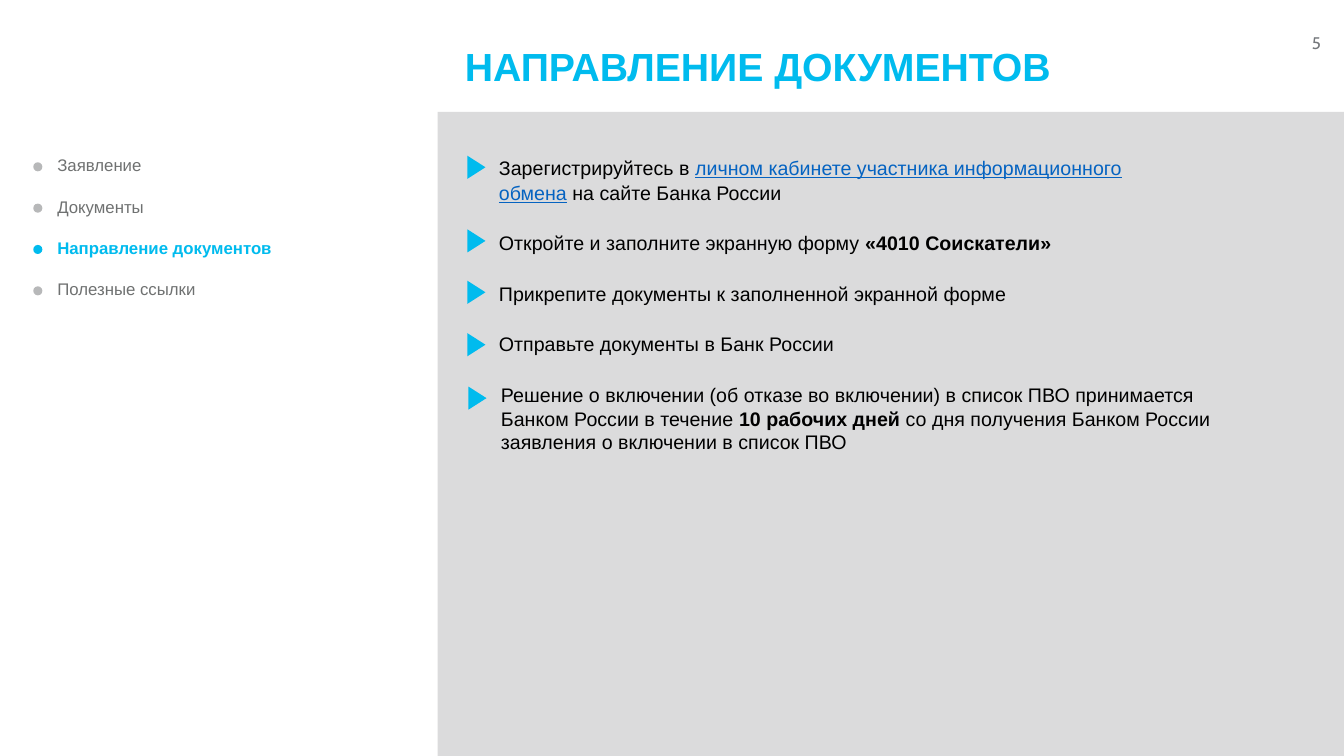
from pptx import Presentation
from pptx.dml.color import RGBColor
from pptx.enum.shapes import MSO_SHAPE
from pptx.enum.text import MSO_ANCHOR, PP_ALIGN
from pptx.util import Inches, Pt

CYAN = RGBColor(0x00, 0xBB, 0xEE)
PANEL = RGBColor(0xDB, 0xDB, 0xDC)
DOT = RGBColor(0xB7, 0xB8, 0xB9)
GRAY = RGBColor(0x6F, 0x71, 0x71)
PAGE = RGBColor(0x74, 0x77, 0x7B)
BLACK = RGBColor(0, 0, 0)
LINK = RGBColor(0x05, 0x63, 0xC1)

TOPICS = ["Заявление", "Документы", "Направление документов", "Полезные ссылки"]
ACTIVE = 2

# Each line is a list of (text, style) runs.
STEPS = [
    [("Зарегистрируйтесь в ", ""),
     ("личном кабинете участника информационного", "link")],
    [("обмена", "link"), (" на сайте Банка России", "")],
    [("Откройте и заполните экранную форму ", ""), ("«4010 Соискатели»", "bold")],
    [("Прикрепите документы к заполненной экранной форме", "")],
    [("Отправьте документы в Банк России", "")],
]
RESULT = [
    ("Решение о включении (об отказе во включении) в список ПВО принимается "
     "Банком России в течение ", ""),
    ("10 рабочих дней ", "bold"),
    ("со дня получения Банком России заявления о включении в список ПВО", ""),
]
ARROWS = [(4.61, 1.57), (4.61, 2.3), (4.61, 2.81), (4.61, 3.33), (4.62, 3.86)]


def style(font, size, color, bold=False, name="Arial"):
    font.name = name
    font.size = Pt(size)
    font.bold = bold
    font.color.rgb = color


def add_box(slide, x, y, w, h):
    frame = slide.shapes.add_textbox(
        Inches(x), Inches(y), Inches(w), Inches(h)).text_frame
    frame.word_wrap = True
    return frame


def add_form(slide, kind, x, y, w, h, color):
    form = slide.shapes.add_shape(
        kind, Inches(x), Inches(y), Inches(w), Inches(h))
    form.shadow.inherit = False
    form.fill.solid()
    form.fill.fore_color.rgb = color
    form.line.fill.background()
    return form


def add_runs(para, parts):
    for text, look in parts:
        run = para.add_run()
        run.text = text
        style(run.font, 14, LINK if look == "link" else BLACK, look == "bold")
        run.font.underline = look == "link"


def add_title(slide, text):
    title = slide.shapes.title
    title.left, title.top = Inches(4.51), Inches(0.18)
    title.width, title.height = Inches(11.5), Inches(1.01)
    frame = title.text_frame
    frame.text = text
    frame.vertical_anchor = MSO_ANCHOR.MIDDLE
    para = frame.paragraphs[0]
    para.alignment = PP_ALIGN.LEFT
    para.line_spacing = 0.9
    style(para.runs[0].font, 28, CYAN, True)


def add_page(slide, number):
    frame = add_box(slide, 10.78, 0.28, 2.42, 0.3)
    frame.text = number
    para = frame.paragraphs[0]
    para.alignment = PP_ALIGN.RIGHT
    style(para.runs[0].font, 12, PAGE, name="Cabin")


def add_menu(slide):
    frame = add_box(slide, 0.47, 1.49, 3.69, 1.54)
    frame.text = "\n".join(TOPICS)
    for i, para in enumerate(frame.paragraphs):
        active = i == ACTIVE
        para.space_after = Pt(15)
        style(para.runs[0].font, 12, CYAN if active else GRAY, active)
        add_form(slide, MSO_SHAPE.OVAL, 0.33, 1.61 + 0.41 * i, 0.09, 0.09,
                 CYAN if active else DOT)


def add_steps(slide):
    frame = add_box(slide, 4.35, 1.48, 8.49, 2.12)
    for i, parts in enumerate(STEPS):
        para = frame.add_paragraph() if i else frame.paragraphs[0]
        para._p.get_or_add_pPr().set("marL", str(Inches(0.5)))
        para.line_spacing = 1.07
        if i > 1:
            para.space_before = Pt(18)
        add_runs(para, parts)


def main():
    deck = Presentation()
    deck.slide_width, deck.slide_height = Inches(13.33), Inches(7.5)
    slide = deck.slides.add_slide(deck.slide_layouts[5])
    add_page(slide, "5")
    add_form(slide, MSO_SHAPE.RECTANGLE, 4.34, 1.11, 8.99, 6.39, PANEL)
    add_title(slide, "НАПРАВЛЕНИЕ ДОКУМЕНТОВ")
    add_menu(slide)
    add_steps(slide)
    add_runs(add_box(slide, 4.87, 3.75, 7.59, 0.81).paragraphs[0], RESULT)
    for x, y in ARROWS:
        arrow = add_form(slide, MSO_SHAPE.ISOSCELES_TRIANGLE,
                         x, y, 0.23, 0.18, CYAN)
        arrow.rotation = 90
    deck.save("out.pptx")


if __name__ == "__main__":
    main()
